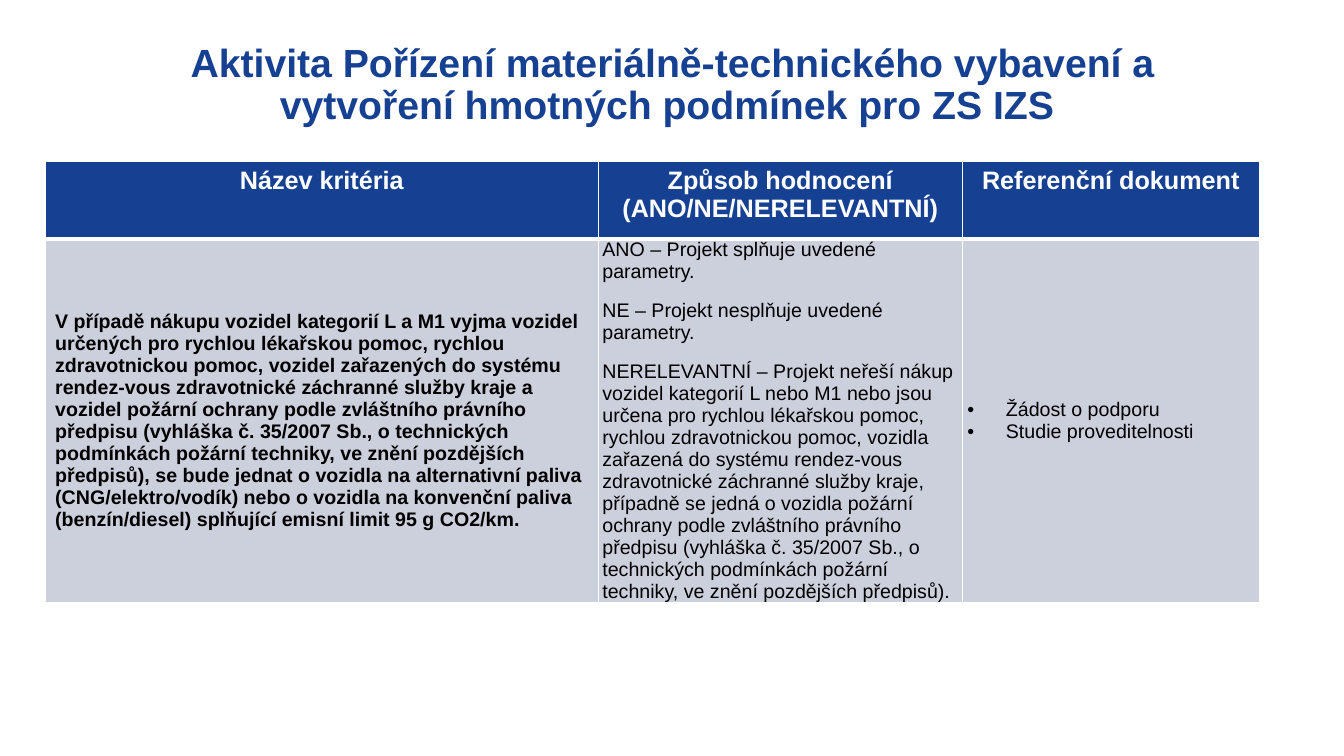
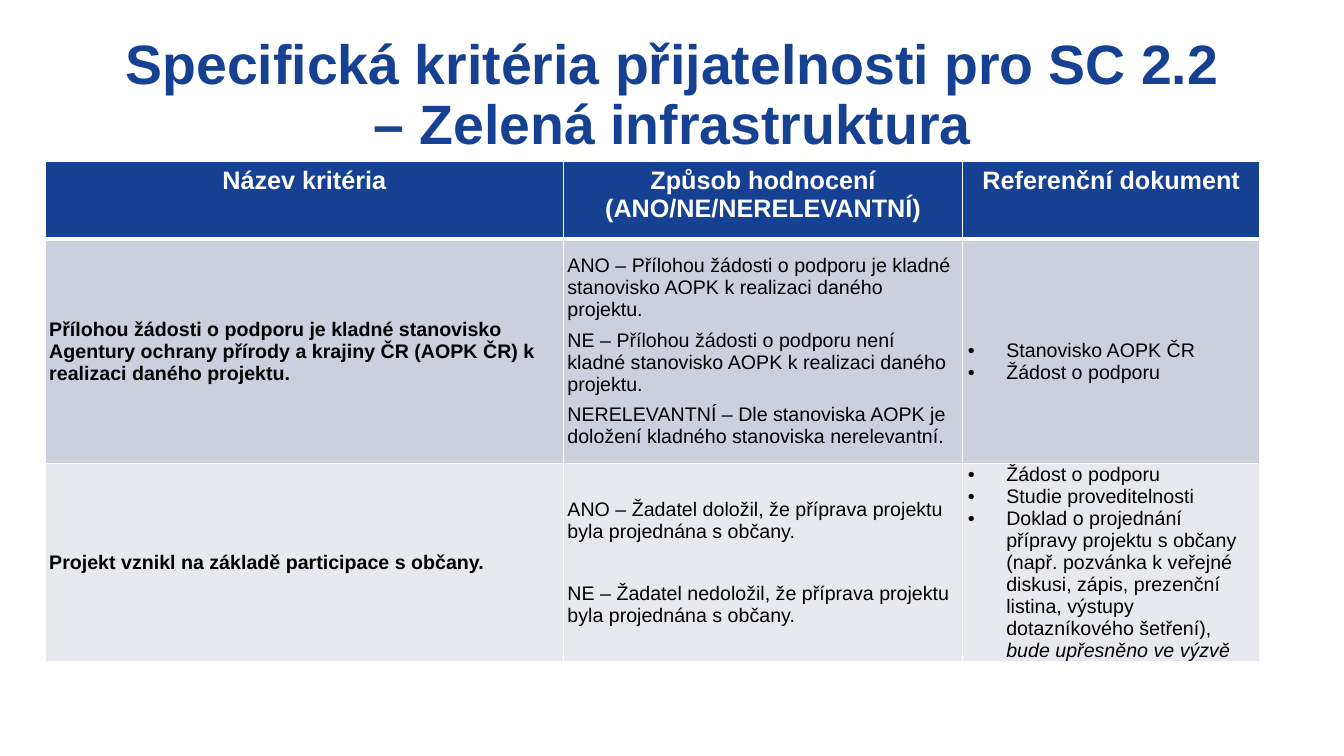
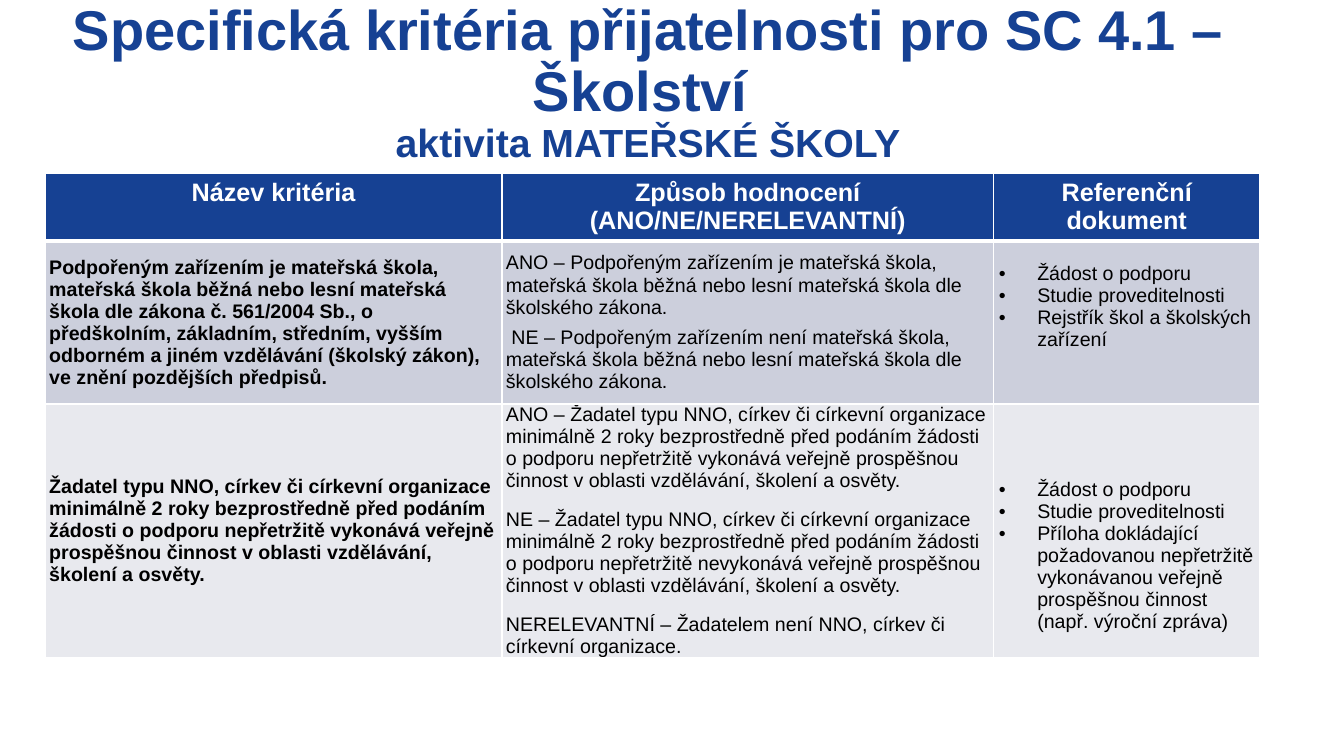
from dataclasses import dataclass

from lxml import etree
from pptx import Presentation
from pptx.dml.color import RGBColor
from pptx.enum import text as t
from pptx.oxml.ns import qn
from pptx.util import Cm, Pt

FONT = "Arial"
BLUE, WHITE, BLACK = "164193", "FFFFFF", "000000"
BANDS = ("CCCFDC", "E8E9EE")
HEADINGS = ("Název kritéria", "Způsob hodnocení (ANO/NE/NERELEVANTNÍ)", "Referenční dokument")
TABLE_LEFT = 1.14
HANGING = 0.97
MIDDLE, TOP = t.MSO_ANCHOR.MIDDLE, t.MSO_ANCHOR.TOP


@dataclass
class Criterion:
    """One table row; lengths in cm, rating_gap in points."""
    height: float
    name: str
    ratings: list
    documents: list
    rating_gap: float = 6
    name_left: float = 0.1
    documents_top: float = 0
    documents_anchor: t.MSO_ANCHOR = MIDDLE


def rgb(value):
    return RGBColor.from_string(value)


def format_runs(paragraph, size, color, bold=False):
    for run in paragraph.runs:
        font = run.font
        font.name, font.size, font.bold = FONT, Pt(size), bold
        font.color.rgb = rgb(color)


def add_title(slide, heading, box, size, subtitle=""):
    title = slide.shapes.title
    title.left, title.top, title.width, title.height = map(Cm, box)
    frame = title.text_frame
    frame.text = f"{heading}\v{subtitle}" if subtitle else heading
    frame.word_wrap = True
    frame.auto_size = t.MSO_AUTO_SIZE.NONE
    frame.vertical_anchor = MIDDLE
    paragraph = frame.paragraphs[0]
    paragraph.alignment = t.PP_ALIGN.CENTER
    paragraph.line_spacing = 0.9
    format_runs(paragraph, size, BLUE, bold=True)
    if subtitle:
        paragraph.runs[-1].font.size = Pt(28)


def set_borders(cell, top=1, bottom=1):
    properties = cell._tc.get_or_add_tcPr()
    widths = (("a:lnL", 1), ("a:lnR", 1), ("a:lnT", top), ("a:lnB", bottom))
    for position, (tag, width) in enumerate(widths):
        line = etree.Element(qn(tag), w=str(Pt(width)))
        fill = etree.SubElement(line, qn("a:solidFill"))
        etree.SubElement(fill, qn("a:srgbClr"), val=WHITE)
        properties.insert(position, line)


def style_cell(cell, fill, **borders):
    cell.fill.solid()
    cell.fill.fore_color.rgb = rgb(fill)
    set_borders(cell, **borders)


def set_margins(cell, left, top=0):
    cell.margin_left, cell.margin_top = Cm(left), Cm(top)
    cell.margin_right, cell.margin_bottom = Cm(0.13), 0


def fill_paragraphs(cell, items, gap=0, bold=False, bullets=False):
    """Write one paragraph per item; a pair is plain text and an italic ending."""
    frame = cell.text_frame
    for index, item in enumerate(items):
        paragraph = frame.add_paragraph() if index else frame.paragraphs[0]
        plain, ending = item if isinstance(item, tuple) else (item, "")
        paragraph.text = plain
        if bullets:
            properties = paragraph._p.get_or_add_pPr()
            properties.set("marL", str(Cm(HANGING)))
            properties.set("indent", str(-Cm(HANGING)))
            etree.SubElement(properties, qn("a:buFont"), typeface=FONT)
            etree.SubElement(properties, qn("a:buChar"), char="•")
        if ending:
            run = paragraph.add_run()
            run.text = ending
            run.font.italic = True
        if index and gap:
            paragraph.space_before = Pt(gap)
        format_runs(paragraph, 14, BLACK, bold)


def add_header(table):
    for cell, heading in zip(table.rows[0].cells, HEADINGS):
        cell.text_frame.text = heading
        paragraph = cell.text_frame.paragraphs[0]
        paragraph.alignment = t.PP_ALIGN.CENTER
        format_runs(paragraph, 18, WHITE, bold=True)
        style_cell(cell, BLUE, bottom=3)


def add_criterion(row, criterion, fill, top_border):
    name, ratings, documents = row.cells
    for cell in row.cells:
        cell.vertical_anchor = MIDDLE
        style_cell(cell, fill, top=top_border)
    set_margins(name, criterion.name_left)
    set_margins(ratings, 0.1)
    set_margins(documents, 0.13, criterion.documents_top)
    documents.vertical_anchor = criterion.documents_anchor
    fill_paragraphs(name, [criterion.name], bold=True)
    fill_paragraphs(ratings, criterion.ratings, gap=criterion.rating_gap)
    fill_paragraphs(documents, criterion.documents, bullets=True)


def add_criteria_table(slide, top, widths, header_height, criteria):
    heights = [header_height] + [criterion.height for criterion in criteria]
    table = slide.shapes.add_table(
        len(heights), len(widths), Cm(TABLE_LEFT), Cm(top),
        Cm(sum(widths)), Cm(sum(heights))).table
    for column, width in zip(table.columns, widths):
        column.width = Cm(width)
    for row, height in zip(table.rows, heights):
        row.height = Cm(height)
    add_header(table)
    for index, criterion in enumerate(criteria):
        add_criterion(table.rows[index + 1], criterion, BANDS[index % 2],
                      top_border=1 if index else 3)


RESCUE = [
    Criterion(
        9.17,
        "V případě nákupu vozidel kategorií L a M1 vyjma vozidel určených pro rychlou "
        "lékařskou pomoc, rychlou zdravotnickou pomoc, vozidel zařazených do systému "
        "rendez-vous zdravotnické záchranné služby kraje a vozidel požární ochrany podle "
        "zvláštního právního předpisu (vyhláška č. 35/2007 Sb., o technických podmínkách "
        "požární techniky, ve znění pozdějších předpisů), se bude jednat o vozidla na "
        "alternativní paliva (CNG/elektro/vodík) nebo o vozidla na konvenční paliva "
        "(benzín/diesel) splňující emisní limit 95 g CO2/km.",
        ["ANO – Projekt splňuje uvedené parametry.",
         "NE – Projekt nesplňuje uvedené parametry.",
         "NERELEVANTNÍ – Projekt neřeší nákup vozidel kategorií L nebo M1 nebo jsou určena "
         "pro rychlou lékařskou pomoc, rychlou zdravotnickou pomoc, vozidla zařazená do "
         "systému rendez-vous zdravotnické záchranné služby kraje, případně se jedná o "
         "vozidla požární ochrany podle zvláštního právního předpisu (vyhláška č. 35/2007 "
         "Sb., o technických podmínkách požární techniky, ve znění pozdějších předpisů)."],
        ["Žádost o podporu", "Studie proveditelnosti"],
        rating_gap=12, name_left=0.25),
]

GREENERY = [
    Criterion(
        5.66,
        "Přílohou žádosti o podporu je kladné stanovisko Agentury ochrany přírody a "
        "krajiny ČR (AOPK ČR) k realizaci daného projektu.",
        ["ANO – Přílohou žádosti o podporu je kladné stanovisko AOPK k realizaci daného "
         "projektu.",
         "NE – Přílohou žádosti o podporu není kladné stanovisko AOPK k realizaci daného "
         "projektu.",
         "NERELEVANTNÍ – Dle stanoviska AOPK je doložení kladného stanoviska nerelevantní."],
        ["Stanovisko AOPK ČR", "Žádost o podporu"],
        documents_top=0.55),
    Criterion(
        5,
        "Projekt vznikl na základě participace s občany.",
        ["ANO – Žadatel doložil, že příprava projektu byla projednána s občany.",
         "NE – Žadatel nedoložil, že příprava projektu byla projednána s občany."],
        ["Žádost o podporu", "Studie proveditelnosti",
         ("Doklad o projednání přípravy projektu s občany (např. pozvánka k veřejné "
          "diskusi, zápis, prezenční listina, výstupy dotazníkového šetření), ",
          "bude upřesněno ve výzvě")],
        rating_gap=28),
]

NURSERIES = [
    Criterion(
        4.11,
        "Podpořeným zařízením je mateřská škola, mateřská škola běžná nebo lesní mateřská "
        "škola dle zákona č. 561/2004 Sb., o předškolním, základním, středním, vyšším "
        "odborném a jiném vzdělávání (školský zákon), ve znění pozdějších předpisů.",
        ["ANO – Podpořeným zařízením je mateřská škola, mateřská škola běžná nebo lesní "
         "mateřská škola dle školského zákona.",
         " NE – Podpořeným zařízením není mateřská škola, mateřská škola běžná nebo lesní "
         "mateřská škola dle školského zákona."],
        ["Žádost o podporu", "Studie proveditelnosti", "Rejstřík škol a školských zařízení"],
        documents_top=0.55, documents_anchor=TOP),
    Criterion(
        6.38,
        "Žadatel typu NNO, církev či církevní organizace minimálně 2 roky bezprostředně "
        "před podáním žádosti o podporu nepřetržitě vykonává veřejně prospěšnou činnost v "
        "oblasti vzdělávání, školení a osvěty.",
        ["ANO – Žadatel typu NNO, církev či církevní organizace minimálně 2 roky "
         "bezprostředně před podáním žádosti o podporu nepřetržitě vykonává veřejně "
         "prospěšnou činnost v oblasti vzdělávání, školení a osvěty.",
         "NE – Žadatel typu NNO, církev či církevní organizace minimálně 2 roky "
         "bezprostředně před podáním žádosti o podporu nepřetržitě nevykonává veřejně "
         "prospěšnou činnost v oblasti vzdělávání, školení a osvěty.",
         "NERELEVANTNÍ – Žadatelem není NNO, církev či církevní organizace."],
        ["Žádost o podporu", "Studie proveditelnosti",
         "Příloha dokládající požadovanou nepřetržitě vykonávanou veřejně prospěšnou "
         "činnost (např. výroční zpráva)"],
        rating_gap=12, documents_top=1.88, documents_anchor=TOP),
]


def main():
    deck = Presentation()
    deck.slide_width, deck.slide_height = Cm(33.87), Cm(19.05)
    title_only = deck.slide_layouts[5]

    rescue = deck.slides.add_slide(title_only)
    add_title(rescue, "Aktivita Pořízení materiálně-technického vybavení a vytvoření "
              "hmotných podmínek pro ZS IZS ", (2.34, 1.02, 29.21, 2.29), 28)
    add_criteria_table(rescue, 4.06, (13.94, 9.17, 7.49), 1.96, RESCUE)

    greenery = deck.slides.add_slide(title_only)
    add_title(greenery, "Specifická kritéria přijatelnosti pro SC 2.2 – Zelená "
              "infrastruktura", (2.34, 1.02, 29.21, 2.84), 39.6)
    add_criteria_table(greenery, 4.06, (13.06, 10.06, 7.49), 1.96, GREENERY)

    nurseries = deck.slides.add_slide(title_only)
    add_title(nurseries, "Specifická kritéria přijatelnosti pro SC 4.1 – Školství ",
              (1.14, 0.38, 30.38, 3.48), 40, subtitle="aktivita MATEŘSKÉ ŠKOLY")
    add_criteria_table(nurseries, 4.37, (11.51, 12.39, 6.71), 1.7, NURSERIES)

    deck.save("out.pptx")


if __name__ == "__main__":
    main()
